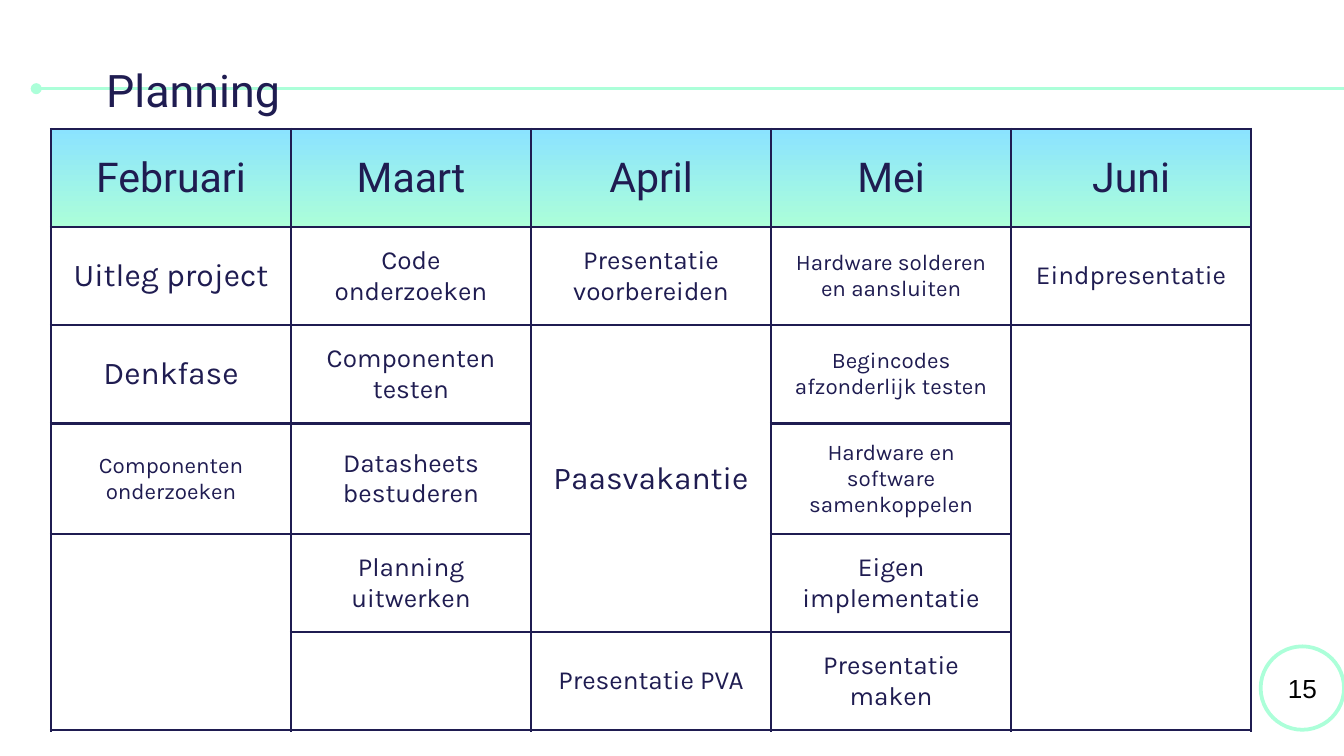
from dataclasses import dataclass

from lxml import etree
from pptx import Presentation
from pptx.dml.color import RGBColor
from pptx.enum.dml import MSO_LINE
from pptx.enum.shapes import MSO_CONNECTOR, MSO_SHAPE
from pptx.enum.text import MSO_ANCHOR, MSO_AUTO_SIZE, PP_ALIGN
from pptx.oxml.ns import qn
from pptx.slide import Slide
from pptx.table import _Cell
from pptx.text.text import TextFrame
from pptx.util import Inches, Pt

SOLID = MSO_LINE.SOLID
STRAIGHT = MSO_CONNECTOR.STRAIGHT
OVAL = MSO_SHAPE.OVAL
TOP, MIDDLE = MSO_ANCHOR.TOP, MSO_ANCHOR.MIDDLE
NO_FIT = MSO_AUTO_SIZE.NONE
LEFT, CENTER = PP_ALIGN.LEFT, PP_ALIGN.CENTER

NAVY, MINT, SKY, WHITE, BLACK = "1F1C51", "ACFFD9", "8BE3FF", "FFFFFF", "000000"
ROWS, PLAN_W, ROW_H = 6, 8.93, 0.73


@dataclass
class Task:
    text: str = ""
    size: int = 14
    span: int = 1


@dataclass
class Month:
    name: str
    tasks: list[Task]


MONTHS = [
    Month("Februari", [
        Task("Uitleg project", 17),
        Task("Denkfase", 17),
        Task("Componenten onderzoeken", 12),
        Task(span=2),
    ]),
    Month("Maart", [
        Task("Code onderzoeken"),
        Task("Componenten testen"),
        Task("Datasheets bestuderen"),
        Task("Planning uitwerken"),
        Task(),
    ]),
    Month("April", [
        Task("Presentatie voorbereiden"),
        Task("Paasvakantie", 17, span=3),
        Task("Presentatie PVA"),
    ]),
    Month("Mei", [
        Task("Hardware solderen en aansluiten", 12),
        Task("Begincodes afzonderlijk testen", 12),
        Task("Hardware en software samenkoppelen", 12),
        Task("Eigen implementatie"),
        Task("Presentatie maken"),
    ]),
    Month("Juni", [Task("Eindpresentatie"), Task(span=4)]),
]


def color(code: str) -> RGBColor:
    return RGBColor.from_string(code)


def write(frame: TextFrame, text: str, size: int, font: str,
          ink: str = NAVY, align: PP_ALIGN = CENTER) -> None:
    frame.text = text
    para = frame.paragraphs[0]
    para.alignment = align
    for run in para.runs:
        run.font.size = Pt(size)
        run.font.name = font
        run.font.bold = False
        run.font.color.rgb = color(ink)


def add_border(cell: _Cell) -> None:
    props = cell._tc.get_or_add_tcPr()
    for index, side in enumerate(("lnL", "lnR", "lnT", "lnB")):
        line = etree.Element(qn(f"a:{side}"), w=str(Pt(1.5)))
        fill = etree.SubElement(line, qn("a:solidFill"))
        etree.SubElement(fill, qn("a:srgbClr"), val=NAVY)
        props.insert(index, line)


def style_cell(cell: _Cell, head: bool) -> None:
    cell.vertical_anchor = MIDDLE
    cell.margin_left = cell.margin_right = Inches(0.12)
    cell.margin_top = cell.margin_bottom = Inches(0.12)
    if head:
        cell.fill.gradient()
        cell.fill.gradient_angle = 270
        for stop, code in zip(cell.fill.gradient_stops, (SKY, MINT)):
            stop.color.rgb = color(code)
    else:
        cell.fill.solid()
        cell.fill.fore_color.rgb = color(WHITE)
    add_border(cell)


def add_title(slide: Slide) -> None:
    title = slide.shapes.title
    title.left, title.top = Inches(0.69), Inches(0.37)
    title.width, title.height = Inches(6.65), Inches(0.59)
    frame = title.text_frame
    frame.auto_size = NO_FIT
    frame.vertical_anchor = TOP
    frame.margin_left = frame.margin_right = Inches(0.1)
    frame.margin_top = frame.margin_bottom = Inches(0.1)
    write(frame, "Planning", 24, "Roboto", align=LEFT)


def add_rule(slide: Slide) -> None:
    """Draw the dotted-end line behind the title."""
    y = Inches(0.66)
    rule = slide.shapes.add_connector(STRAIGHT, Inches(0.27), y, Inches(10.1), y)
    rule.line.color.rgb = color(MINT)
    rule.line.width = Pt(1.5)
    rule.line.dash_style = SOLID
    props = rule.element.spPr
    etree.SubElement(props.find(qn("a:ln")), qn("a:headEnd"), type="oval")
    etree.SubElement(props, qn("a:effectLst"))
    slide.shapes.title.element.addprevious(rule.element)


def add_plan(slide: Slide) -> None:
    count = len(MONTHS)
    table = slide.shapes.add_table(
        ROWS, count, Inches(0.38), Inches(0.96),
        Inches(PLAN_W), Inches(ROW_H * ROWS)).table
    table.first_row = table.horz_banding = False
    for row in range(ROWS):
        for col in range(count):
            style_cell(table.cell(row, col), head=row == 0)
    for col, month in enumerate(MONTHS):
        write(table.cell(0, col).text_frame, month.name, 22, "Roboto")
        row = 1
        for task in month.tasks:
            cell = table.cell(row, col)
            if task.span > 1:
                cell.merge(table.cell(row + task.span - 1, col))
            if task.text:
                write(cell.text_frame, task.text, task.size, "Karla")
            row += task.span


def add_number(slide: Slide) -> None:
    size = Inches(0.62)
    badge = slide.shapes.add_shape(OVAL, Inches(9.38), Inches(4.81), size, size)
    badge.shadow.inherit = False
    badge.fill.solid()
    badge.fill.fore_color.rgb = color(WHITE)
    badge.line.color.rgb = color(MINT)
    badge.line.width = Pt(2)
    frame = badge.text_frame
    frame.vertical_anchor = MIDDLE
    frame.margin_left = frame.margin_right = 0
    write(frame, "15", 14, "Arial", BLACK)


def main() -> None:
    deck = Presentation()
    deck.slide_width = Inches(10)
    deck.slide_height = deck.slide_width * 9 // 16
    slide = deck.slides.add_slide(deck.slide_layouts[5])
    add_title(slide)
    add_rule(slide)
    add_plan(slide)
    add_number(slide)
    deck.save("out.pptx")


if __name__ == "__main__":
    main()
